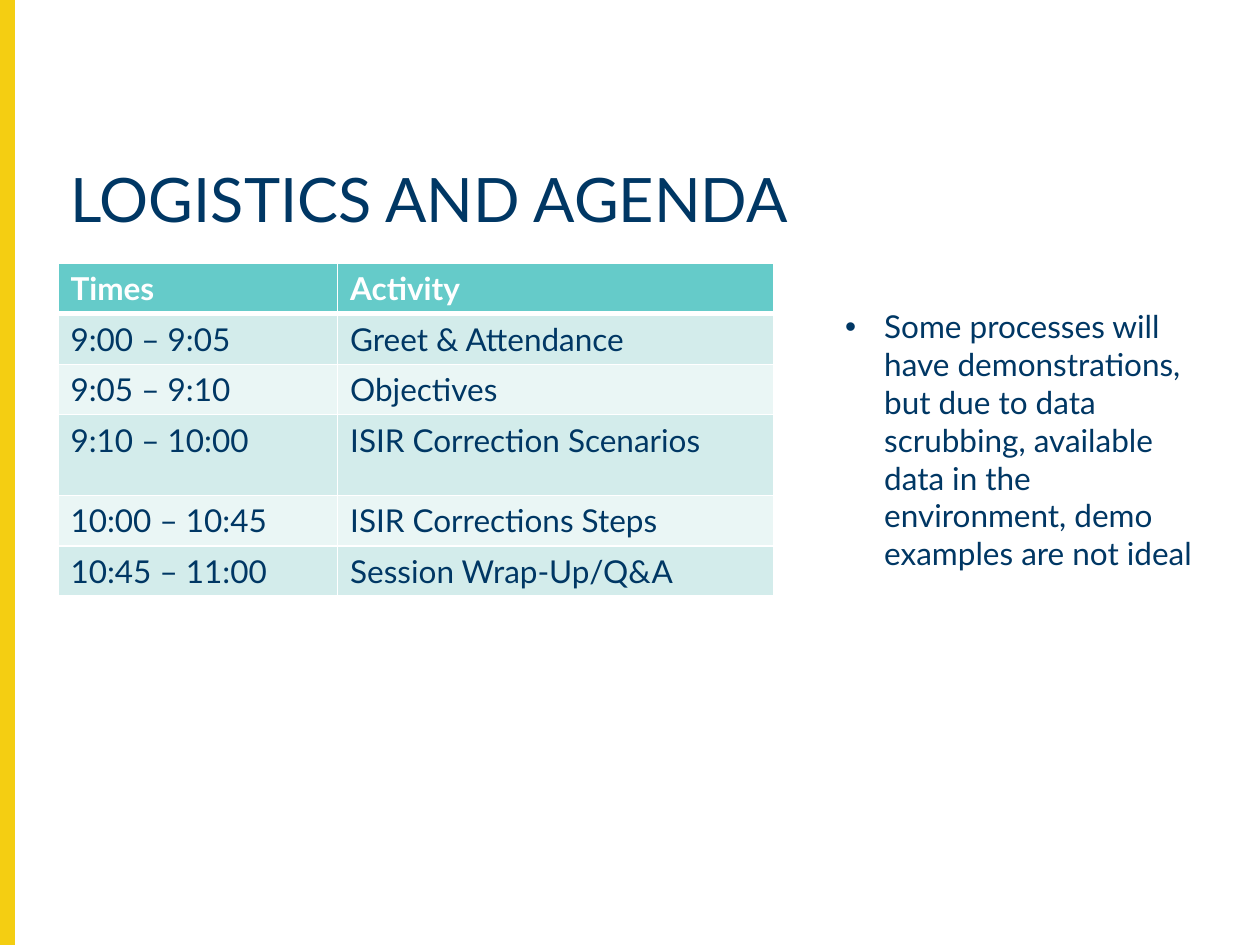
import dataclasses
import typing

import lxml.etree
import pptx
import pptx.dml.color
import pptx.enum.shapes
import pptx.enum.text
import pptx.oxml
import pptx.oxml.ns
import pptx.util

WIDE = pptx.util.Inches(10)
HIGH = pptx.util.Inches(7.5)


@dataclasses.dataclass(frozen=True)
class Theme:
    font: str = "Lato"
    navy: str = "003764"
    gold: str = "F4CE12"
    teal: str = "65CBC9"
    mist: str = "D3ECEB"
    pale: str = "EAF6F5"
    white: str = "FFFFFF"
    head: int = 35
    body: int = 18


@dataclasses.dataclass(frozen=True)
class Box:
    left: float
    top: float
    width: float
    height: float


class Event(typing.NamedTuple):
    time: str
    task: str
    height: float = 0.4


THEME = Theme()
EDGE = Box(0, 0, 1.1, 100)
TITLE = Box(4.6, 17.33, 93.3, 10.53)
GRID = Box(4.6, 27.87, 56.8, 35.2)
NOTE = Box(66.1, 31.87, 30.4, 29.6)
COLS = (22.2, 34.6)
EVENTS = (
    Event("Times", "Activity"),
    Event("9:00 – 9:05", "Greet & Attendance"),
    Event("9:05 – 9:10", "Objectives"),
    Event("9:10 – 10:00", "ISIR Correction Scenarios", 0.64),
    Event("10:00 – 10:45", "ISIR Corrections Steps"),
    Event("10:45 – 11:00", "Session Wrap-Up/Q&A"),
)
REMARK = (
    "Some processes will have demonstrations, but due to data scrubbing, "
    "available data in the environment, demo examples are not ideal"
)


def across(share: float) -> int:
    return round(WIDE * share / 100)


def down(share: float) -> int:
    return round(HIGH * share / 100)


def place(box: Box) -> tuple[int, int, int, int]:
    return across(box.left), down(box.top), across(box.width), down(box.height)


def tint(code: str) -> pptx.dml.color.RGBColor:
    return pptx.dml.color.RGBColor.from_string(code)


def apply(thing: typing.Any, form: dict[str, typing.Any]) -> None:
    for name, value in form.items():
        setattr(thing, name, value)


def fill(thing: typing.Any, code: str) -> None:
    thing.fill.solid()
    thing.fill.fore_color.rgb = tint(code)


def write(frame: typing.Any, text: str, size: int, code: str, bold: bool = False) -> typing.Any:
    frame.text = text
    line = frame.paragraphs[0]
    line.alignment = pptx.enum.text.PP_ALIGN.LEFT
    font = line.runs[0].font
    apply(font, {"name": THEME.font, "size": pptx.util.Pt(size), "bold": bold})
    font.color.rgb = tint(code)
    return line


def draw_edge(slide: typing.Any) -> None:
    kind = pptx.enum.shapes.MSO_SHAPE.RECTANGLE
    bar = slide.shapes.add_shape(kind, *place(EDGE))
    bar.shadow.inherit = False
    fill(bar, THEME.gold)
    fill(bar.line, THEME.gold)
    bar.line.width = pptx.util.Pt(1)


def draw_title(slide: typing.Any) -> None:
    title = slide.shapes.title
    apply(title, dict(zip(("left", "top", "width", "height"), place(TITLE))))
    apply(title.text_frame, {
        "word_wrap": True,
        "auto_size": pptx.enum.text.MSO_AUTO_SIZE.NONE,
        "vertical_anchor": pptx.enum.text.MSO_ANCHOR.TOP,
    })
    line = write(title.text_frame, "LOGISTICS AND AGENDA", THEME.head, THEME.navy)
    line.line_spacing = 0.9


def rule(cell: typing.Any, first: bool) -> None:
    props = cell._tc.get_or_add_tcPr()
    space = pptx.oxml.ns.nsdecls("a")
    for spot, side in enumerate("LRTB"):
        width = pptx.util.Pt(3 if first and side == "B" else 1)
        props.insert(spot, pptx.oxml.parse_xml(
            f'<a:ln{side} {space} w="{width}"><a:solidFill>'
            f'<a:srgbClr val="{THEME.white}"/></a:solidFill></a:ln{side}>'
        ))


def draw_grid(slide: typing.Any) -> None:
    table = slide.shapes.add_table(len(EVENTS), len(COLS), *place(GRID)).table
    for col, share in zip(table.columns, COLS):
        col.width = across(share)
    for row, event in enumerate(EVENTS):
        table.rows[row].height = pptx.util.Inches(event.height)
        first = row == 0
        shade = THEME.teal if first else (THEME.pale, THEME.mist)[row % 2]
        ink = THEME.white if first else THEME.navy
        for col, text in enumerate((event.time, event.task)):
            cell = table.cell(row, col)
            write(cell.text_frame, text, THEME.body, ink, first)
            fill(cell, shade)
            rule(cell, first)


def draw_note(slide: typing.Any) -> None:
    frame = slide.shapes.add_textbox(*place(NOTE)).text_frame
    apply(frame, {
        "word_wrap": True,
        "auto_size": pptx.enum.text.MSO_AUTO_SIZE.SHAPE_TO_FIT_TEXT,
    })
    line = write(frame, REMARK, THEME.body, THEME.navy)
    props = line._p.get_or_add_pPr()
    inset = pptx.util.Inches(0.31)
    props.set("marL", str(inset))
    props.set("indent", str(-inset))
    for tag, key, value in (("a:buFont", "typeface", "Arial"), ("a:buChar", "char", "•")):
        lxml.etree.SubElement(props, pptx.oxml.ns.qn(tag)).set(key, value)


def main() -> None:
    deck = pptx.Presentation()
    apply(deck, {"slide_width": WIDE, "slide_height": HIGH})
    slide = deck.slides.add_slide(deck.slide_layouts[5])
    for draw in (draw_edge, draw_title, draw_grid, draw_note):
        draw(slide)
    deck.save("out.pptx")


if __name__ == "__main__":
    main()
